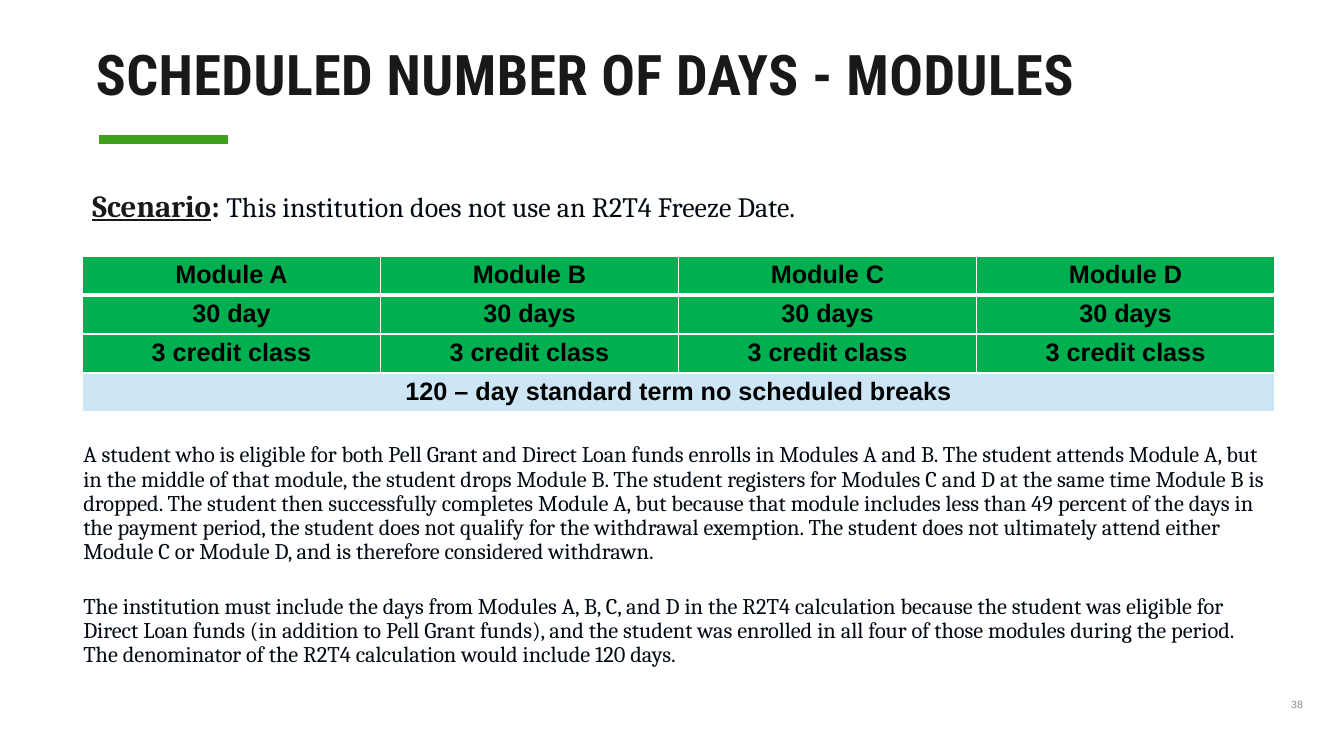
import pptx
import pptx.util
import pptx.dml.color
import pptx.enum.shapes
import pptx.enum.text
import pptx.oxml
import pptx.oxml.ns

Cm, Pt = pptx.util.Cm, pptx.util.Pt


def rgb(hex_color):
    return pptx.dml.color.RGBColor.from_string(hex_color)


def add_run(p, text, size, font, color, **formats):
    r = p.add_run()
    r.text = text
    formats.update(size=Pt(size), name=font)
    for name, value in formats.items():
        setattr(r.font, name, value)
    r.font.color.rgb = rgb(color)
    return r


prs = pptx.Presentation()
prs.slide_width, prs.slide_height = Cm(33.87), Cm(19.05)
s = prs.slides.add_slide(prs.slide_layouts[6])

# Text boxes: left, top, width, height and margins in cm
boxes = {
    "title": ((2.08, 1.02, 26.24, 2.21), (0.33, 0.18, 0.33, 0.18)),
    "scenario": ((2.08, 4.67, 28.85, 1.3), (0.25, 0.13, 0.25, 0.13)),
    "explanation": ((1.85, 11.05, 30.48, 6.99), (0.25, 0.13, 0.25, 0.13)),
    "number": ((32.54, 17.58, 1.07, 1.04), (0, 0, 0.25, 0.13)),
}
frames = {}
for name, (place, margins) in boxes.items():
    tf = s.shapes.add_textbox(*map(Cm, place)).text_frame
    tf.word_wrap = True
    for side, margin in zip(("left", "top", "right", "bottom"), margins):
        setattr(tf, f"margin_{side}", Cm(margin))
    frames[name] = tf

# Title with its green rule
p = frames["title"].paragraphs[0]
p.line_spacing = 0.9
r = add_run(p, "SCHEDULED NUMBER OF DAYS - MODULES", 40, "Roboto Condensed", "191918", bold=True)
r.font._element.set("spc", "40")

rule = s.shapes.add_connector(
    pptx.enum.shapes.MSO_CONNECTOR.STRAIGHT, Cm(2.5), Cm(3.51), Cm(5.75), Cm(3.51))
rule.line.color.rgb = rgb("3EA11B")
rule.line.width = Pt(6.25)
rule._element.spPr.append(pptx.oxml.parse_xml(
    f'<a:effectLst {pptx.oxml.ns.nsdecls("a")}/>'))

# Scenario
p = frames["scenario"].paragraphs[0]
p.line_spacing = 0.9
add_run(p, "Scenario", 22, "Cambria", "191918", bold=True, underline=True)
add_run(p, ": ", 22, "Cambria", "191918", bold=True)
add_run(p, "This institution does not use an R2T4 Freeze Date.", 20, "Cambria", "030A13")

# Module table
rows = [
    [f"Module {letter}" for letter in "ABCD"],
    ["30 day"] + ["30 days"] * 3,
    ["3 credit class"] * 4,
    ["120 – day standard term no scheduled breaks", "", "", ""],
]
table = s.shapes.add_table(4, 4, Cm(2.08), Cm(6.45), Cm(30.04), Cm(3.84)).table
for i, row in enumerate(rows):
    table.rows[i].height = Cm(0.96)
    for j, text in enumerate(row):
        cell = table.cell(i, j)
        cell.margin_top = cell.margin_bottom = Cm(0.11)
        widths = {"L": 1, "R": 1, "T": 3 if i == 1 else 1, "B": 3 if i == 0 else 1}
        for side, width in widths.items():
            cell._tc.get_or_add_tcPr().append(pptx.oxml.parse_xml(
                f'<a:ln{side} {pptx.oxml.ns.nsdecls("a")} w="{Pt(width)}"><a:solidFill>'
                f'<a:srgbClr val="FFFFFF"/></a:solidFill></a:ln{side}>'))
        cell.fill.solid()
        cell.fill.fore_color.rgb = rgb("CCE6F5" if i == 3 else "00B050")
        p = cell.text_frame.paragraphs[0]
        p.alignment = pptx.enum.text.PP_ALIGN.CENTER
        if text:
            add_run(p, text, 18, "Arial", "000000", bold=True)
table.cell(3, 0).merge(table.cell(3, 3))

# Explanation
explanation = [
    "A student who is eligible for both Pell Grant and Direct Loan funds enrolls in Modules A "
    "and B. The student attends Module A, but in the middle of that module, the student drops "
    "Module B. The student registers for Modules C and D at the same time Module B is dropped. "
    "The student then successfully completes Module A, but because that module includes less "
    "than 49 percent of the days in the payment period, the student does not qualify for the "
    "withdrawal exemption. The student does not ultimately attend either Module C or Module D, "
    "and is therefore considered withdrawn.",
    "The institution must include the days from Modules A, B, C, and D in the R2T4 calculation "
    "because the student was eligible for Direct Loan funds (in addition to Pell Grant funds), "
    "and the student was enrolled in all four of those modules during the period. The "
    "denominator of the R2T4 calculation would include 120 days.",
]
tf = frames["explanation"]
for i, text in enumerate(explanation):
    p = tf.add_paragraph() if i else tf.paragraphs[0]
    p.line_spacing = 0.9
    p.space_before = Pt(10 if i else 0)
    p.space_after = Pt(12)
    add_run(p, text, 16, "Cambria", "030A13")

# Slide number
add_run(frames["number"].paragraphs[0], "38", 7.5, "Arial", "8C8C8C")

prs.save("out.pptx")
